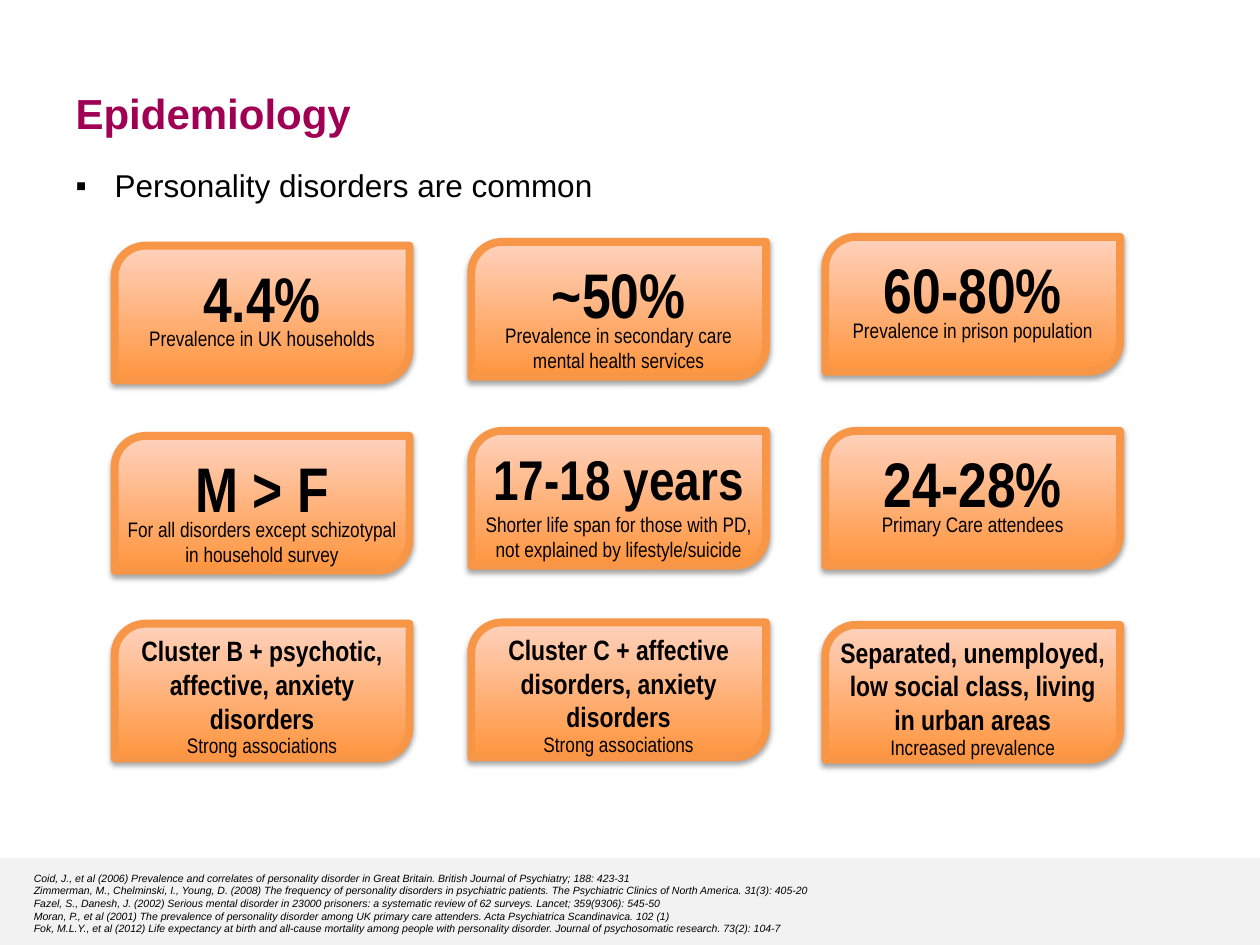
"""Build the Epidemiology slide on personality disorders."""
from dataclasses import dataclass

from lxml.etree import SubElement
from pptx import Presentation
from pptx.dml.color import RGBColor
from pptx.enum.shapes import MSO_SHAPE
from pptx.enum.text import MSO_ANCHOR, MSO_AUTO_SIZE, PP_ALIGN
from pptx.oxml.ns import qn
from pptx.util import Inches, Pt


@dataclass(frozen=True)
class Theme:
    font: str = "Arial"
    card_font: str = "Arial Narrow"
    title: str = "A00054"
    text: str = "000000"
    strip: str = "F2F2F2"
    card_low: str = "FF953E"
    card_high: str = "FFD2BD"
    card_line: str = "F79646"
    title_size: int = 24
    body_size: int = 18
    note_size: int = 12
    reference_size: int = 6


T = Theme()


def place(sp, left, top, width, height):
    sp.left, sp.top = Inches(left), Inches(top)
    sp.width, sp.height = Inches(width), Inches(height)


def style(tf, font, size, color=T.text, bold=False, italic=False, align=PP_ALIGN.LEFT):
    tf.word_wrap = True
    for p in tf.paragraphs:
        p.alignment = align
        p.space_before = Pt(0)
        for r in p.runs:
            r.font.name, r.font.size = font, Pt(size)
            r.font.bold, r.font.italic = bold, italic
            r.font.color.rgb = RGBColor.from_string(color)


prs = Presentation()
prs.slide_width, prs.slide_height = Inches(10), Inches(7.5)
s = prs.slides.add_slide(prs.slide_layouts[1])

title = s.shapes.title
place(title, 0.5, 0.62, 8.5, 0.55)
tf = title.text_frame
tf.text = "Epidemiology"
tf.vertical_anchor = MSO_ANCHOR.MIDDLE
style(tf, T.font, T.title_size, T.title, bold=True)

body = s.placeholders[1]
place(body, 0.5, 1.27, 9.2, 0.4)
tf = body.text_frame
tf.text = "Personality disorders are common"
tf.auto_size = MSO_AUTO_SIZE.NONE
pPr = tf.paragraphs[0]._p.get_or_add_pPr()
pPr.set("marL", str(Inches(0.31)))
pPr.set("indent", str(-Inches(0.31)))
SubElement(pPr, qn("a:buFont"), typeface=T.font)
SubElement(pPr, qn("a:buChar"), char="▪")
style(tf, T.font, T.body_size)

strip = s.shapes.add_shape(MSO_SHAPE.RECTANGLE, 0, Inches(6.81), Inches(10), Inches(0.69))
strip.shadow.inherit = False
strip.fill.solid()
strip.fill.fore_color.rgb = RGBColor.from_string(T.strip)
strip.line.fill.background()

references = [
    "Coid, J., et al (2006) Prevalence and correlates of personality disorder in Great Britain. "
    "British Journal of Psychiatry; 188: 423-31",
    "Zimmerman, M., Chelminski, I., Young, D. (2008) The frequency of personality disorders in "
    "psychiatric patients. The Psychiatric Clinics of North America. 31(3): 405-20",
    "Fazel, S., Danesh, J. (2002) Serious mental disorder in 23000 prisoners: a systematic review "
    "of 62 surveys. Lancet; 359(9306): 545-50",
    "Moran, P., et al (2001) The prevalence of personality disorder among UK primary care "
    "attenders. Acta Psychiatrica Scandinavica. 102 (1)",
    "Fok, M.L.Y., et al (2012) Life expectancy at birth and all-cause mortality among people with "
    "personality disorder. Journal of psychosomatic research. 73(2): 104-7",
]
tf = s.shapes.add_textbox(Inches(0.17), Inches(6.87), Inches(9.69), Inches(0.61)).text_frame
tf.text = "\n".join(references)
style(tf, T.font, T.reference_size, italic=True)

columns = [0.91, 3.74, 6.55]
card_w, card_h = 2.34, 1.07
rows = [
    (0.58, 0.36, [
        (1.95, 36, "4.4%", "Prevalence in UK households"),
        (1.92, 36, "~50%", "Prevalence in secondary care mental health services"),
        (1.88, 36, "60-80%", "Prevalence in prison population"),
    ]),
    (0.58, 0.36, [
        (3.46, 36, "M > F", "For all disorders except schizotypal in household survey"),
        (3.42, 32, "17-18 years",
         "Shorter life span for those with PD, not explained by lifestyle/suicide"),
        (3.42, 36, "24-28%", "Primary Care attendees"),
    ]),
    (0.81, 0.13, [
        (4.95, 16, "Cluster B + psychotic, affective, anxiety disorders", "Strong associations"),
        (4.94, 16, "Cluster C + affective disorders, anxiety disorders", "Strong associations"),
        (4.96, 16, "Separated, unemployed, low social class, living in urban areas",
         "Increased prevalence"),
    ]),
]

for note_offset, note_h, cards in rows:
    for left, (top, size, headline, note) in zip(columns, cards):
        shapes = s.shapes.add_group_shape().shapes
        card = shapes.add_shape(MSO_SHAPE.ROUND_2_DIAG_RECTANGLE, Inches(left), Inches(top),
                                Inches(card_w), Inches(card_h))
        card.adjustments[0], card.adjustments[1] = 0.23, 0
        card.fill.gradient()
        card.fill.gradient_angle = 90
        for stop, position, color in zip(card.fill.gradient_stops, (0, 1),
                                         (T.card_low, T.card_high)):
            stop.position = position
            stop.color.rgb = RGBColor.from_string(color)
        card.line.color.rgb = RGBColor.from_string(T.card_line)
        card.line.width = Pt(4.5)
        card.shadow.inherit = False
        effects = card._element.spPr.find(qn("a:effectLst"))
        shadow = SubElement(effects, qn("a:outerShdw"), blurRad=str(Pt(3.1)), dist=str(Pt(1.8)),
                            dir="5400000", rotWithShape="0")
        shade = SubElement(shadow, qn("a:srgbClr"), val=T.text)
        SubElement(shade, qn("a:alpha"), val="35000")

        for text, text_size, offset, height, bold in (
            (note, T.note_size, note_offset, note_h, False),
            (headline, size, 0.02, 0.8, True),
        ):
            tf = shapes.add_textbox(Inches(left), Inches(top + offset),
                                    Inches(card_w), Inches(height)).text_frame
            tf.text = text
            tf.vertical_anchor = MSO_ANCHOR.TOP
            tf.margin_left = tf.margin_right = Inches(0.09)
            tf.margin_top = Inches(0.04) + Pt(text_size * 0.1)
            tf.margin_bottom = 0
            style(tf, T.card_font, text_size, bold=bold, align=PP_ALIGN.CENTER)

prs.save("out.pptx")
